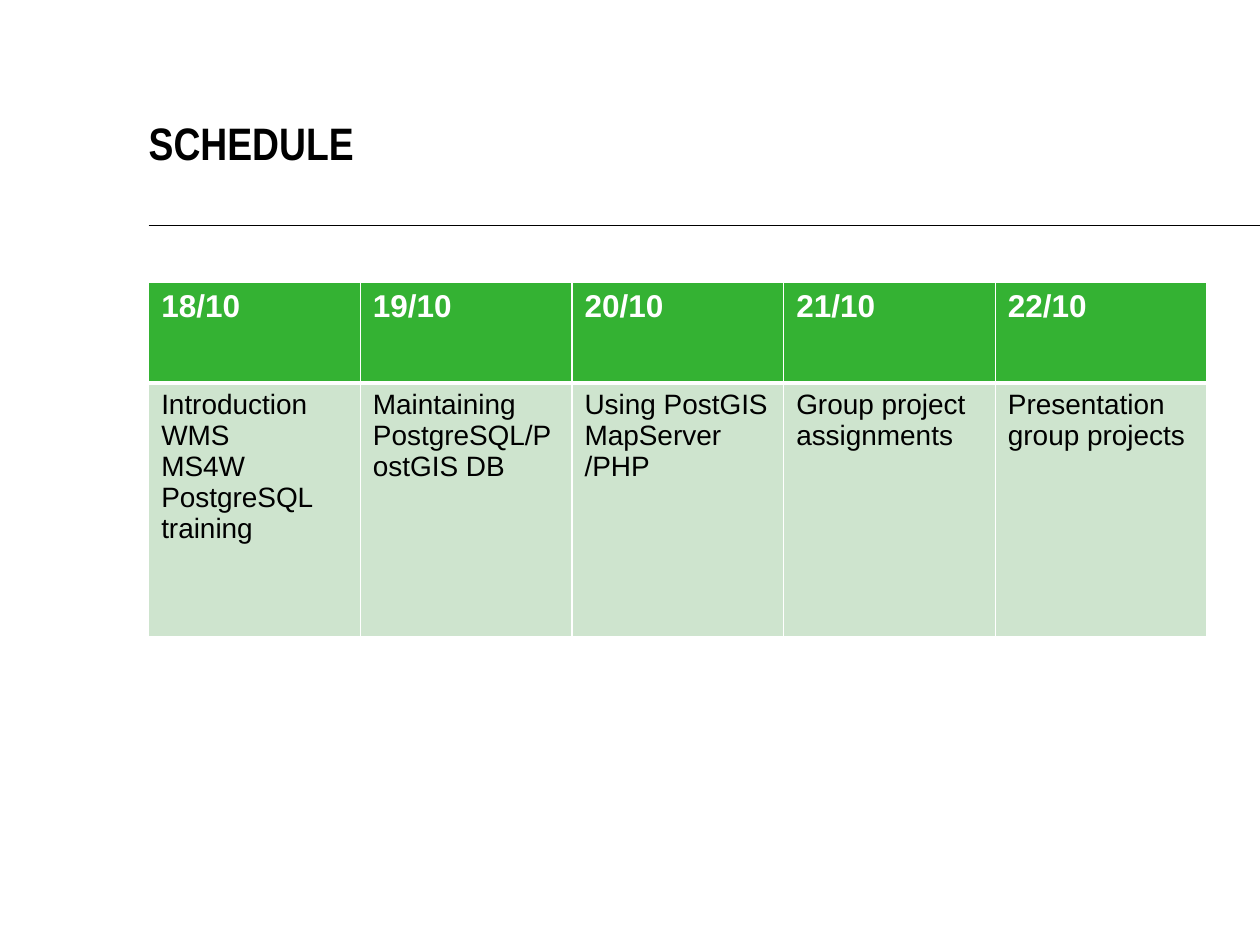
"""Build the course schedule slide."""
from dataclasses import dataclass

from lxml import etree
from pptx import Presentation
from pptx import util as u
from pptx.dml.color import RGBColor
from pptx.enum import shapes, text
from pptx.oxml.ns import qn


@dataclass(frozen=True)
class Theme:
    black: str = "000000"
    white: str = "FFFFFF"
    green: str = "34B233"
    pale_green: str = "CEE4CE"
    title_font: str = "Arial Narrow"
    body_font: str = "Arial"
    title_size: int = 26
    header_size: int = 18
    body_size: int = 16
    thin: int = 1
    thick: int = 3


SCHEDULE = {
    "18/10": ["Introduction", "WMS", "MS4W", "PostgreSQL training"],
    "19/10": ["Maintaining PostgreSQL/PostGIS DB"],
    "20/10": ["Using PostGIS", "MapServer /PHP"],
    "21/10": ["Group project assignments"],
    "22/10": ["Presentation group projects"],
}
LEFT = 1.18


class SlideBuilder:
    def __init__(self, page, theme):
        self.page = page
        self.theme = theme

    def add_span(self, para, words, font, size, color, bold):
        span = para.add_run()
        span.text = words
        span.font.name = font
        span.font.size = u.Pt(size)
        span.font.bold = bold
        span.font.color.rgb = RGBColor.from_string(color)

    def title(self, words, left, top, width, height):
        box = self.page.shapes.title
        box.left, box.top = u.Inches(left), u.Inches(top)
        box.width, box.height = u.Inches(width), u.Inches(height)
        frame = box.text_frame
        frame.margin_left = frame.margin_right = 0
        frame.margin_top = frame.margin_bottom = 0
        frame.word_wrap = True
        frame.auto_size = text.MSO_AUTO_SIZE.NONE
        frame.vertical_anchor = text.MSO_ANCHOR.BOTTOM
        para = frame.paragraphs[0]
        para.alignment = text.PP_ALIGN.LEFT
        para.line_spacing = u.Pt(25)
        theme = self.theme
        self.add_span(para, words, theme.title_font, theme.title_size, theme.black, True)

    def rule(self, left, right, top):
        line = self.page.shapes.add_connector(
            shapes.MSO_CONNECTOR.STRAIGHT,
            u.Inches(left), u.Inches(top), u.Inches(right), u.Inches(top),
        )
        line.line.color.rgb = RGBColor.from_string(self.theme.black)
        line.line.width = u.Pt(self.theme.thin)
        properties = line._element.find(qn("p:spPr"))
        etree.SubElement(properties, qn("a:effectLst"))

    def borders(self, cell, top, bottom):
        thin = self.theme.thin
        properties = cell._tc.get_or_add_tcPr()
        widths = {"lnL": thin, "lnR": thin, "lnT": top, "lnB": bottom}
        for position, (side, width) in enumerate(widths.items()):
            line = etree.Element(qn(f"a:{side}"), w=str(u.Pt(width)))
            fill = etree.SubElement(line, qn("a:solidFill"))
            etree.SubElement(fill, qn("a:srgbClr"), val=self.theme.white)
            properties.insert(position, line)

    def cell(self, cell, lines, fill, color, size, bold):
        cell.fill.solid()
        cell.fill.fore_color.rgb = RGBColor.from_string(fill)
        frame = cell.text_frame
        for number, words in enumerate(lines):
            para = frame.add_paragraph() if number else frame.paragraphs[0]
            self.add_span(para, words, self.theme.body_font, size, color, bold)

    def schedule(self, days, left, top, column_width, row_heights):
        theme = self.theme
        table = self.page.shapes.add_table(
            len(row_heights), len(days), u.Inches(left), u.Inches(top),
            u.Inches(column_width * len(days)), u.Inches(sum(row_heights)),
        ).table
        for row, height in zip(table.rows, row_heights):
            row.height = u.Inches(height)
        for number, (date, topics) in enumerate(days.items()):
            table.columns[number].width = u.Inches(column_width)
            header, body = table.cell(0, number), table.cell(1, number)
            self.cell(header, [date], theme.green, theme.white, theme.header_size, True)
            self.cell(body, topics, theme.pale_green, theme.black, theme.body_size, False)
            self.borders(header, theme.thin, theme.thick)
            self.borders(body, theme.thick, theme.thin)


def main():
    deck = Presentation()
    deck.slide_width, deck.slide_height = u.Inches(10), u.Inches(7.5)
    builder = SlideBuilder(deck.slides.add_slide(deck.slide_layouts[5]), Theme())
    builder.rule(LEFT, 10, 1.79)
    builder.schedule(SCHEDULE, LEFT, 2.24, 1.68, [0.8, 2.01])
    builder.title("SCHEDULE", LEFT, 0.55, 8.5, 0.8)
    deck.save("out.pptx")


if __name__ == "__main__":
    main()
